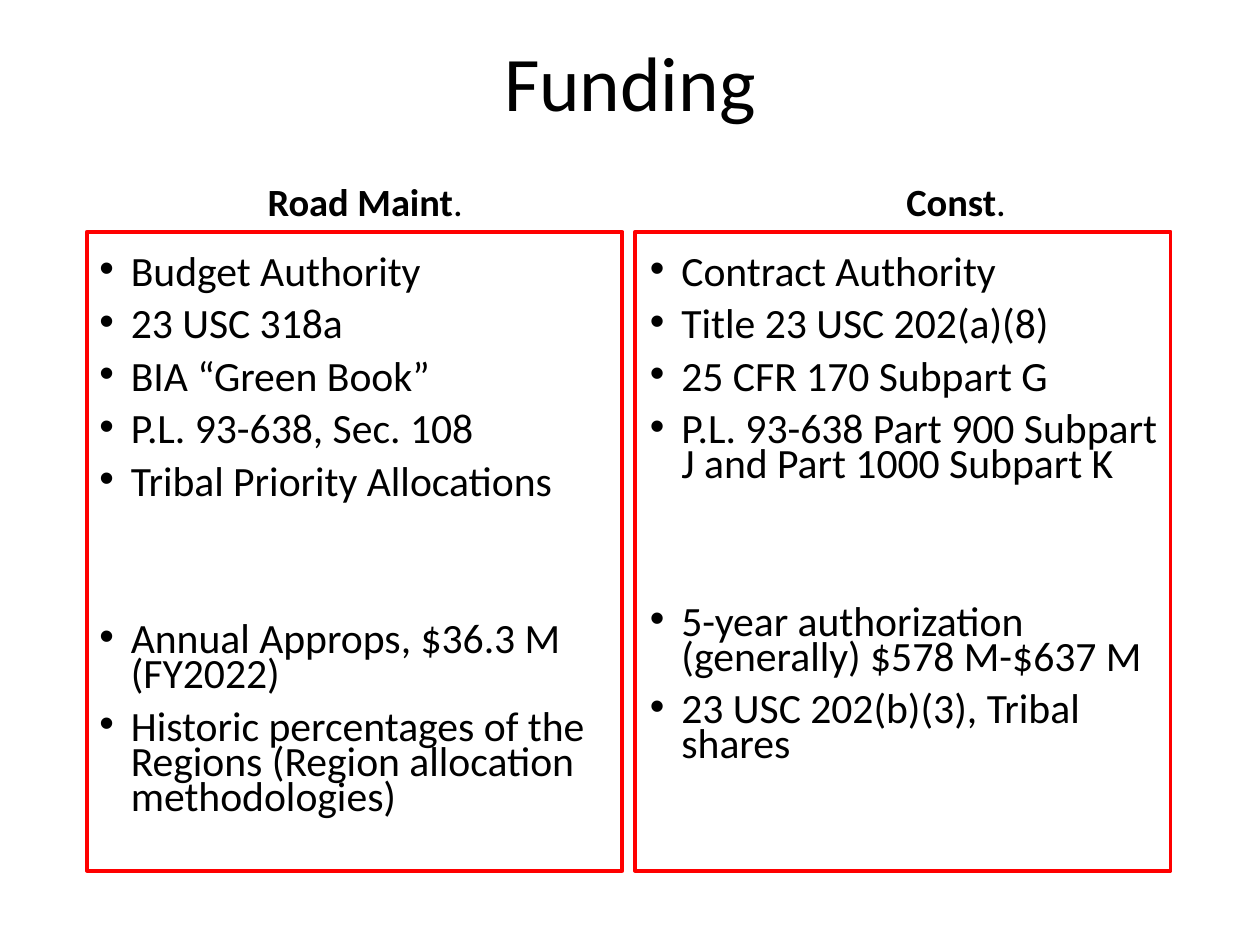
from lxml import etree
from pptx import Presentation
from pptx import util as u
from pptx.dml.color import RGBColor
from pptx.enum import shapes, text
from pptx.oxml.ns import qn

BLACK = RGBColor(0x00, 0x00, 0x00)
RED = RGBColor(0xFF, 0x00, 0x00)

COLUMN_WIDTH = 4.25
SECTION_GAP = 70  # points above the paragraph that opens the funding amounts

ROAD_MAINTENANCE = [
    "Budget Authority",
    "23 USC 318a",
    "BIA “Green Book”",
    "P.L. 93-638, Sec. 108",
    "Tribal Priority Allocations",
    "Annual Approps, $36.3 M (FY2022)",
    "Historic percentages of the Regions (Region allocation methodologies)",
]
CONSTRUCTION = [
    "Contract Authority",
    "Title 23 USC 202(a)(8)",
    "25 CFR 170 Subpart G",
    "P.L. 93-638 Part 900 Subpart J and Part 1000 Subpart K",
    "5-year authorization (generally) $578 M-$637 M",
    "23 USC 202(b)(3), Tribal shares",
]


class FundingPage:
    """Holds the style and the current slide."""

    font_name = "Calibri"

    def __init__(self, deck):
        self.page = deck.slides.add_slide(deck.slide_layouts[6])

    def text_frame(self, left, top, width, height, anchor):
        box = self.page.shapes.add_textbox(
            u.Inches(left), u.Inches(top), u.Inches(width), u.Inches(height))
        frame = box.text_frame
        frame.word_wrap = True
        frame.vertical_anchor = anchor
        return frame

    def style(self, para, size, spacing):
        para.line_spacing = spacing
        para.font.name = self.font_name
        para.font.size = u.Pt(size)
        para.font.color.rgb = BLACK

    def title(self, words):
        frame = self.text_frame(0.69, 0.26, 8.62, 0.86, text.MSO_ANCHOR.MIDDLE)
        para = frame.paragraphs[0]
        para.text = words
        para.alignment = text.PP_ALIGN.CENTER
        self.style(para, 44.1, 0.9)

    def headings(self, words_and_centers):
        """One line of bold headings, each centred on its own tab stop."""
        frame = self.text_frame(0.75, 1.42, 8.62, 0.42, text.MSO_ANCHOR.MIDDLE)
        para = frame.paragraphs[0]
        self.style(para, 22, 0.8)
        properties = para._p.get_or_add_pPr()
        tabs = etree.Element(qn("a:tabLst"))
        properties.insert_element_before(tabs, "a:defRPr", "a:extLst")
        for words, center in words_and_centers:
            etree.SubElement(tabs, qn("a:tab"), pos=str(u.Inches(center)), algn="ctr")
            for part, bold in (("\t" + words, True), (".", False)):
                span = para.add_run()
                span.text = part
                span.font.bold = bold

    def bullets(self, left, items, section_start):
        frame = self.text_frame(left, 2, COLUMN_WIDTH, 4.76, text.MSO_ANCHOR.TOP)
        for index, item in enumerate(items):
            para = frame.add_paragraph() if index else frame.paragraphs[0]
            para.text = item
            self.style(para, 23.8, 0.7)
            para.space_before = u.Pt(SECTION_GAP if index == section_start else 10)
            properties = para._p.get_or_add_pPr()
            properties.set("marL", str(u.Inches(0.25)))
            properties.set("indent", str(-u.Inches(0.25)))
            for tag, name, value in (("a:buFont", "typeface", "Arial"),
                                     ("a:buChar", "char", "•")):
                mark = etree.Element(qn(tag), {name: value})
                properties.insert_element_before(mark, "a:tabLst", "a:defRPr", "a:extLst")

    def frame(self, left):
        box = self.page.shapes.add_shape(
            shapes.MSO_SHAPE.RECTANGLE, u.Inches(left), u.Inches(1.84),
            u.Inches(COLUMN_WIDTH), u.Inches(5.07))
        box.shadow.inherit = False
        box.fill.background()
        box.line.color.rgb = RED
        box.line.width = u.Pt(2.25)


def main():
    deck = Presentation()
    deck.slide_width, deck.slide_height = u.Inches(10), u.Inches(7.5)
    funding = FundingPage(deck)

    # Title
    funding.title("Funding")

    # Column texts
    funding.bullets(0.69, ROAD_MAINTENANCE, section_start=5)
    funding.bullets(5.06, CONSTRUCTION, section_start=4)

    # Column headings
    funding.headings([("Road Maint", 2.05), ("Const", 6.74)])

    # Red frames
    for left in (0.69, 5.04):
        funding.frame(left)

    deck.save("out.pptx")


if __name__ == "__main__":
    main()
